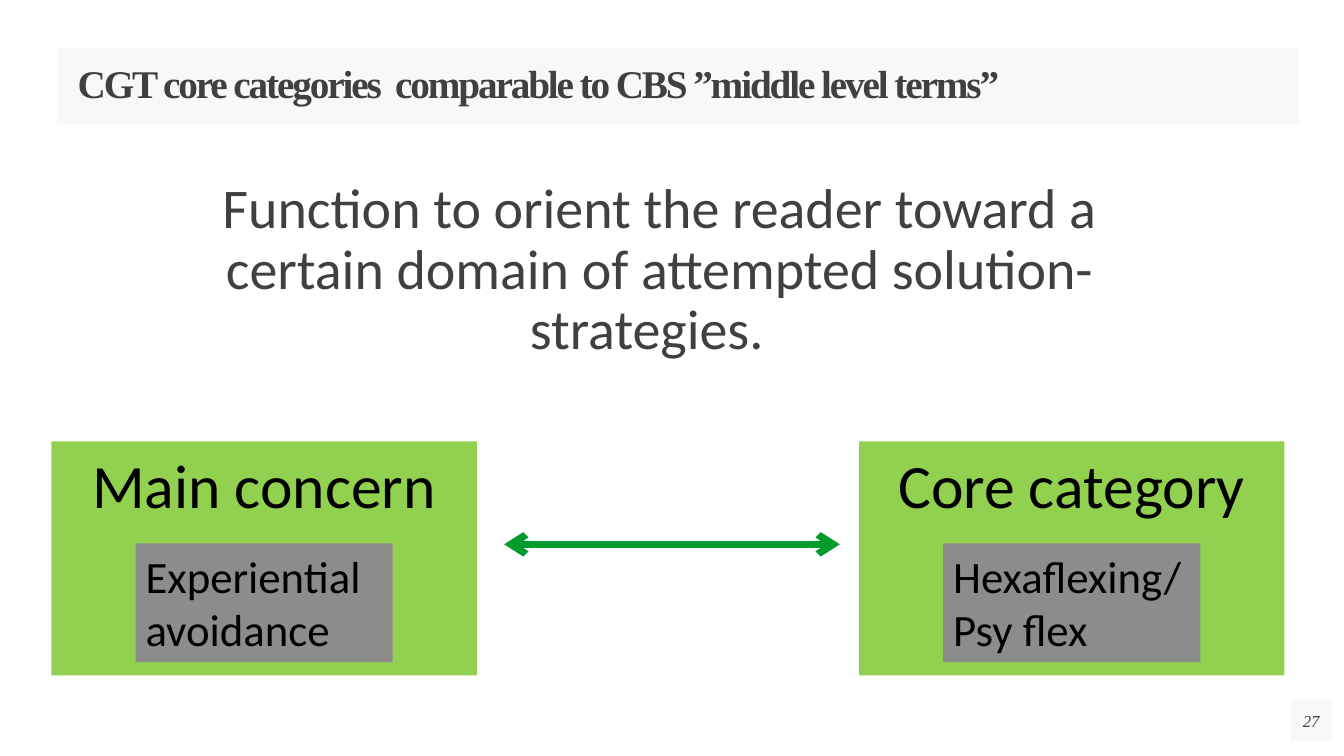
from lxml import etree
from pptx import Presentation
from pptx import util as u
from pptx.dml.color import RGBColor
from pptx.enum import shapes, text
from pptx.oxml.ns import qn

GREEN = RGBColor(0x92, 0xD0, 0x50)
ARROW_GREEN = RGBColor(0x02, 0x9B, 0x2D)
GREY = RGBColor(0x8C, 0x8C, 0x8C)
PALE = RGBColor(0xF2, 0xF2, 0xF2)
DARK = RGBColor(0x40, 0x40, 0x40)
BLACK = RGBColor(0, 0, 0)
SANS, SERIF = "Calibri", "Times New Roman"
LEFT, CENTER = text.PP_ALIGN.LEFT, text.PP_ALIGN.CENTER
TOP, MIDDLE = text.MSO_ANCHOR.TOP, text.MSO_ANCHOR.MIDDLE


def place(shape, box):
    shape.left, shape.top, shape.width, shape.height = map(u.Inches, box)


def fill_solid(shape, color, alpha=None):
    shape.fill.solid()
    shape.fill.fore_color.rgb = color
    if alpha is not None:
        tint = shape._element.spPr.find(qn("a:solidFill"))[0]
        etree.SubElement(tint, qn("a:alpha"), val=str(alpha * 1000))


def write(shape, lines, size, font, color, align=LEFT, anchor=TOP, insets=None):
    """Fill the shape's text frame, one paragraph a line, and return it."""
    frame = shape.text_frame
    frame.word_wrap = True
    frame.auto_size = text.MSO_AUTO_SIZE.NONE
    frame.vertical_anchor = anchor
    if insets:
        (frame.margin_left, frame.margin_top,
         frame.margin_right, frame.margin_bottom) = map(u.Inches, insets)
    for index, line in enumerate(lines):
        paragraph = frame.add_paragraph() if index else frame.paragraphs[0]
        paragraph.alignment = align
        run = paragraph.add_run()
        run.text = line
        run.font.size = u.Pt(size)
        run.font.name = font
        run.font.color.rgb = color
    return frame


def add_block(slide, box, color, alpha=None):
    shape = slide.shapes.add_shape(shapes.MSO_SHAPE.RECTANGLE, *map(u.Inches, box))
    shape.shadow.inherit = False
    shape.line.fill.background()
    fill_solid(shape, color, alpha)
    return shape


def add_title(slide, box):
    title = slide.shapes.title
    place(title, box)
    fill_solid(title, PALE, 50)
    frame = write(title, ["CGT core categories  comparable to CBS ”middle level terms”"],
                  28, SERIF, DARK, anchor=MIDDLE, insets=(0.2, 0, 0, 0))
    paragraph = frame.paragraphs[0]
    paragraph.line_spacing = 0.9
    font = paragraph.runs[0].font
    font.bold = True
    font._element.set("spc", "-150")


def add_body(slide, box):
    body = slide.placeholders[1]
    place(body, box)
    frame = write(body, ["Function to orient the reader toward a certain domain of "
                         "attempted solution-strategies.  "],
                  40, SANS, DARK, CENTER, insets=(0, 0, 0, 0))
    paragraph = frame.paragraphs[0]
    paragraph.line_spacing = 0.9
    paragraph.space_before = u.Pt(10)
    # No bullet or hanging indent
    properties = paragraph._p.get_or_add_pPr()
    properties.set("marL", "0")
    properties.set("indent", "0")
    etree.SubElement(properties, qn("a:buNone"))


def add_concept(slide, box, heading, example):
    """Green panel with a heading and a grey example box, centred across."""
    left, top, width, _ = box
    write(add_block(slide, box, GREEN), [heading], 44, SANS, BLACK, CENTER)
    inner_width = 2.55
    inner = (left + (width - inner_width) / 2, top + 1.01, inner_width, 1.18)
    write(add_block(slide, inner, GREY), example, 32, SANS, BLACK)


def add_double_arrow(slide, start, end, y):
    arrow = slide.shapes.add_connector(
        shapes.MSO_CONNECTOR.STRAIGHT, *map(u.Inches, (start, y, end, y)))
    arrow.line.color.rgb = ARROW_GREEN
    arrow.line.width = u.Pt(5)
    line = arrow.line._get_or_add_ln()
    for tag in ("a:headEnd", "a:tailEnd"):
        etree.SubElement(line, qn(tag), type="arrow")
    etree.SubElement(arrow._element.spPr, qn("a:effectLst"))


def add_page_number(slide, box, number):
    frame = write(add_block(slide, box, PALE, 50), [number], 12, SERIF, DARK,
                  CENTER, MIDDLE, (0, 0, 0, 0))
    frame.paragraphs[0].runs[0].font.italic = True


def main():
    presentation = Presentation()
    presentation.slide_width = u.Inches(13.33)
    presentation.slide_height = u.Inches(7.5)
    slide = presentation.slides.add_slide(presentation.slide_layouts[1])

    # Heading and statement
    add_title(slide, (0.57, 0.47, 12.31, 0.76))
    add_body(slide, (1.92, 1.79, 9.24, 2.22))

    # Two concepts joined by an arrow
    add_concept(slide, (0.51, 4.38, 4.22, 2.32), "Main concern",
                ["Experiential avoidance"])
    add_concept(slide, (8.52, 4.38, 4.22, 2.32), "Core category",
                ["Hexaflexing/", "Psy flex"])
    add_double_arrow(slide, 5, 8.33, 5.4)

    # Footer
    add_page_number(slide, (12.8, 6.95, 0.41, 0.4), "27")
    presentation.save("out.pptx")


if __name__ == "__main__":
    main()
